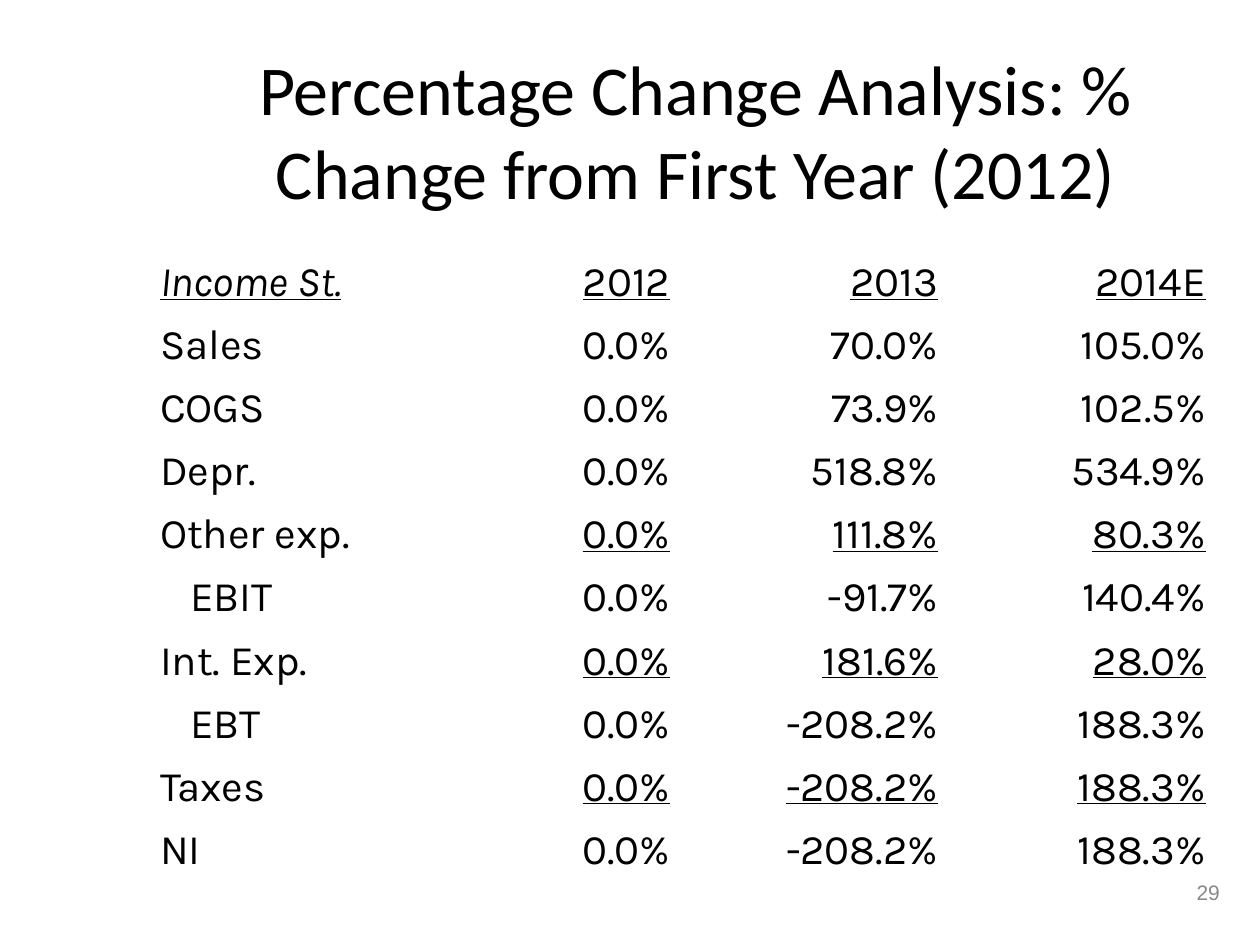
from pptx import Presentation
from pptx.dml.color import RGBColor
from pptx.enum.text import MSO_ANCHOR, PP_ALIGN
from pptx.util import Inches, Pt

LEFT, CENTER, RIGHT = PP_ALIGN.LEFT, PP_ALIGN.CENTER, PP_ALIGN.RIGHT
MIDDLE = MSO_ANCHOR.MIDDLE

ROWS = [
    ("Income St.", "2012", "2013", "2014E"),
    ("Sales", "0.0%", "70.0%", "105.0%"),
    ("COGS", "0.0%", "73.9%", "102.5%"),
    ("Depr.", "0.0%", "518.8%", "534.9%"),
    ("Other exp.", "0.0%", "111.8%", "80.3%"),
    ("EBIT", "0.0%", "-91.7%", "140.4%"),
    ("Int. Exp.", "0.0%", "181.6%", "28.0%"),
    ("EBT", "0.0%", "-208.2%", "188.3%"),
    ("Taxes", "0.0%", "-208.2%", "188.3%"),
    ("NI", "0.0%", "-208.2%", "188.3%"),
]
SUBTOTALS = {"EBIT", "EBT"}
UNDERLINED = {"Income St.", "Other exp.", "Int. Exp.", "Taxes"}
ROW_HEIGHT = 0.49


def write(frame, text, font, size, color, align):
    """Fill a text frame with one formatted paragraph and return its run."""
    frame.text = text
    para = frame.paragraphs[0]
    para.alignment = align
    span = para.runs[0]
    span.font.name = font
    span.font.size = Pt(size)
    span.font.color.rgb = RGBColor.from_string(color)
    return span


def add_text(page, left, top, width, height, *style):
    box = page.shapes.add_textbox(Inches(left), Inches(top), Inches(width), Inches(height))
    box.text_frame.word_wrap = True
    box.text_frame.vertical_anchor = MIDDLE
    write(box.text_frame, *style)


deck = Presentation()
deck.slide_width = Inches(10)
deck.slide_height = Inches(7.5)
page = deck.slides.add_slide(deck.slide_layouts[6])

add_text(page, 1.26, 0.23, 8.52, 1.6,
         "Percentage Change Analysis: % Change from First Year (2012)",
         "Calibri", 40, "000000", CENTER)

table = page.shapes.add_table(
    len(ROWS), len(ROWS[0]), Inches(1.17), Inches(2),
    Inches(8.5), Inches(ROW_HEIGHT * len(ROWS))).table
table.first_row = False
table.horz_banding = False

for row_index, values in enumerate(ROWS):
    label = values[0]
    table.rows[row_index].height = Inches(ROW_HEIGHT)
    for column_index, value in enumerate(values):
        is_label = column_index == 0
        is_heading = row_index == 0
        cell = table.cell(row_index, column_index)
        cell.fill.background()
        span = write(cell.text_frame, value, "Karla", 24, "000000",
                     LEFT if is_label else RIGHT)
        span.font.italic = is_label and is_heading
        span.font.underline = label in UNDERLINED and (is_heading or not is_label)
        if is_label and label in SUBTOTALS:
            cell.margin_left = Inches(0.34)

add_text(page, 7.7, 6.83, 2.08, 0.5, "29", "Arial", 12, "898989", RIGHT)

deck.save("out.pptx")
